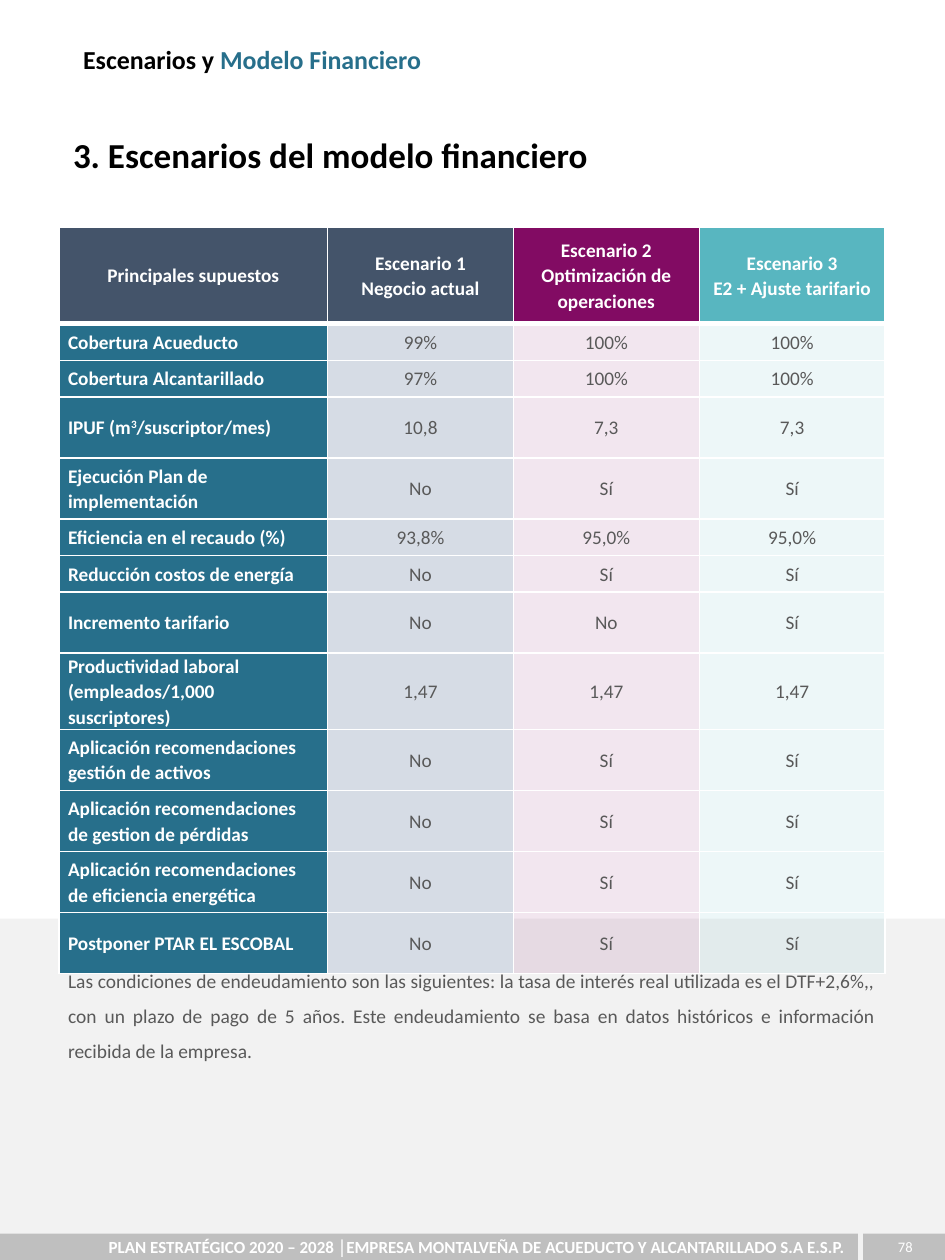
from pptx import Presentation
from pptx.dml.color import RGBColor
from pptx.enum.shapes import MSO_SHAPE as Shape
from pptx.enum.text import MSO_ANCHOR as Anchor, PP_ALIGN as Align
from pptx.oxml.ns import qn
from pptx.util import Inches, Pt
from lxml.etree import SubElement

WIDTH, HEIGHT = 7.5, 10
FONT = "Calibri"
WHITE, BLACK, GREY, TEXT_GREY = "FFFFFF", "000000", "BFBFBF", "595959"
BLUE, NAVY, PURPLE, TEAL = "276F8B", "44546A", "820B63", "58B6C0"

HEADERS = [
    (["Principales supuestos"], NAVY),
    (["Escenario 1", "Negocio actual"], NAVY),
    (["Escenario 2", "Optimización de operaciones"], PURPLE),
    (["Escenario 3", "E2 + Ajuste tarifario"], TEAL),
]
BODY_FILLS = [(BLUE, 100), ("D6DCE5", 100), (PURPLE, 10), (TEAL, 10)]
LOW, TALL, HEADER_HEIGHT = 0.29, 0.485, 0.77
ASSUMPTIONS = [
    (LOW, "Cobertura Acueducto", "99%", "100%", "100%"),
    (LOW, "Cobertura Alcantarillado", "97%", "100%", "100%"),
    (TALL, "IPUF (m^3^/suscriptor/mes)", "10,8", "7,3", "7,3"),
    (TALL, "Ejecución Plan de implementación", "No", "Sí", "Sí"),
    (LOW, "Eficiencia en el recaudo (%)", "93,8%", "95,0%", "95,0%"),
    (LOW, "Reducción costos de energía", "No", "Sí", "Sí"),
    (TALL, "Incremento tarifario", "No", "No", "Sí"),
    (TALL, "Productividad laboral (empleados/1,000 suscriptores)", "1,47", "1,47", "1,47"),
    (TALL, "Aplicación recomendaciones gestión de activos", "No", "Sí", "Sí"),
    (TALL, "Aplicación recomendaciones de gestion de pérdidas", "No", "Sí", "Sí"),
    (TALL, "Aplicación recomendaciones de eficiencia energética", "No", "Sí", "Sí"),
    (TALL, "Postponer PTAR EL ESCOBAL", "No", "Sí", "Sí"),
]
COLUMN_WIDTHS = [2.13] + [1.475] * 3
TABLE_LEFT, TABLE_TOP = 0.47, 1.8

FOOTER_TOP = 9.79
FOOTER = [
    (0, 6.81, Align.RIGHT, "PLAN ESTRATÉGICO 2020 – 2028 │EMPRESA MONTALVEÑA DE ACUEDUCTO Y ALCANTARILLADO S.A E.S.P.", 9.7, True),
    (6.85, 0.67, Align.CENTER, "78", 8.3, False),
]
SECTION = [("Escenarios y ", BLACK), ("Modelo Financiero", BLUE)]
TITLE = [("3. Escenarios del modelo financiero", BLACK)]
DEBT_NOTE = [(
    "Las condiciones de endeudamiento son las siguientes: la tasa de interés real utilizada "
    "es el DTF+2,6%,, con un plazo de pago de 5 años. Este endeudamiento se basa en datos "
    "históricos e información recibida de la empresa. ", TEXT_GREY)]


def color(value):
    return RGBColor.from_string(value)


def add_run(paragraph, text, size, value, bold=False):
    run = paragraph.add_run()
    run.text = text
    font = run.font
    font.name, font.size, font.bold = FONT, Pt(size), bold
    font.color.rgb = color(value)
    return run


def add_band(slide, left, top, width, height, value):
    shape = slide.shapes.add_shape(
        Shape.RECTANGLE, Inches(left), Inches(top), Inches(width), Inches(height))
    shape.shadow.inherit = False
    shape.fill.solid()
    shape.fill.fore_color.rgb = color(value)
    shape.line.fill.background()
    return shape


def add_text(slide, left, top, width, height, runs, size, bold=True):
    box = slide.shapes.add_textbox(Inches(left), Inches(top), Inches(width), Inches(height))
    frame = box.text_frame
    frame.word_wrap = True
    frame.margin_left = Inches(0.07)
    paragraph = frame.paragraphs[0]
    for text, value in runs:
        add_run(paragraph, text, size, value, bold)
    return paragraph


def style_cell(cell, value, opacity, top_line, bottom_line):
    cell.vertical_anchor = Anchor.MIDDLE
    cell.margin_left = cell.margin_right = Inches(0.07)
    cell.margin_top = cell.margin_bottom = 0
    cell.fill.solid()
    cell.fill.fore_color.rgb = color(value)
    properties = cell._tc.get_or_add_tcPr()
    if opacity < 100:
        tint = properties.find(qn("a:solidFill")).find(qn("a:srgbClr"))
        SubElement(tint, qn("a:alpha"), val=str(opacity * 1000))
    borders = [("a:lnL", 1), ("a:lnR", 1), ("a:lnT", top_line), ("a:lnB", bottom_line)]
    for index, (tag, points) in enumerate(borders):
        line = SubElement(properties, qn(tag), w=str(Pt(points)))
        SubElement(SubElement(line, qn("a:solidFill")), qn("a:srgbClr"), val=WHITE)
        properties.insert(index, line)


def cell_paragraph(cell, align):
    paragraph = cell.text_frame.paragraphs[0]
    paragraph.alignment = align
    paragraph.line_spacing = 1.07
    paragraph.space_after = Pt(8)
    return paragraph


def add_scenarios(slide):
    heights = [HEADER_HEIGHT] + [row[0] for row in ASSUMPTIONS]
    table = slide.shapes.add_table(
        len(heights), len(COLUMN_WIDTHS), Inches(TABLE_LEFT), Inches(TABLE_TOP),
        Inches(sum(COLUMN_WIDTHS)), Inches(sum(heights))).table
    for column, width in zip(table.columns, COLUMN_WIDTHS):
        column.width = Inches(width)
    for row, height in zip(table.rows, heights):
        row.height = Inches(height)

    for column, (lines, value) in enumerate(HEADERS):
        cell = table.cell(0, column)
        style_cell(cell, value, 100, 1, 3)
        paragraph = cell_paragraph(cell, Align.CENTER)
        paragraph.space_before = Pt(6)
        for index, line in enumerate(lines):
            if index:
                paragraph.add_line_break()
            add_run(paragraph, line, 11, WHITE, True)

    for row, (_, *texts) in enumerate(ASSUMPTIONS, 1):
        for column, (text, (value, opacity)) in enumerate(zip(texts, BODY_FILLS)):
            cell = table.cell(row, column)
            style_cell(cell, value, opacity, 3 if row == 1 else 1, 1)
            is_label = column == 0
            paragraph = cell_paragraph(cell, Align.LEFT if is_label else Align.CENTER)
            for index, part in enumerate(text.split("^")):
                run = add_run(paragraph, part, 11, WHITE if is_label else TEXT_GREY, is_label)
                if index % 2:
                    run.font._element.set("baseline", "30000")


def main():
    presentation = Presentation()
    presentation.slide_width, presentation.slide_height = Inches(WIDTH), Inches(HEIGHT)
    slide = presentation.slides.add_slide(presentation.slide_layouts[6])

    add_band(slide, 0, 7.29, WIDTH, HEIGHT - 7.29, "F2F2F2")
    for left, width, align, text, size, bold in FOOTER:
        band = add_band(slide, left, FOOTER_TOP, width, HEIGHT - FOOTER_TOP, GREY)
        band.text_frame.vertical_anchor = Anchor.MIDDLE
        paragraph = band.text_frame.paragraphs[0]
        paragraph.alignment = align
        add_run(paragraph, text, size, WHITE, bold)

    add_scenarios(slide)
    add_text(slide, 0.51, 1.01, 6.57, 0.44, TITLE, 20)
    note = add_text(slide, TABLE_LEFT, 7.55, 6.57, 0.91, DEBT_NOTE, 11.1, False)
    note.alignment = Align.JUSTIFY
    note.line_spacing = 1.5
    note.space_after = Pt(6)
    add_text(slide, 0.59, 0.3, 5.17, 0.35, SECTION, 14.8)

    presentation.save("out.pptx")


if __name__ == "__main__":
    main()
